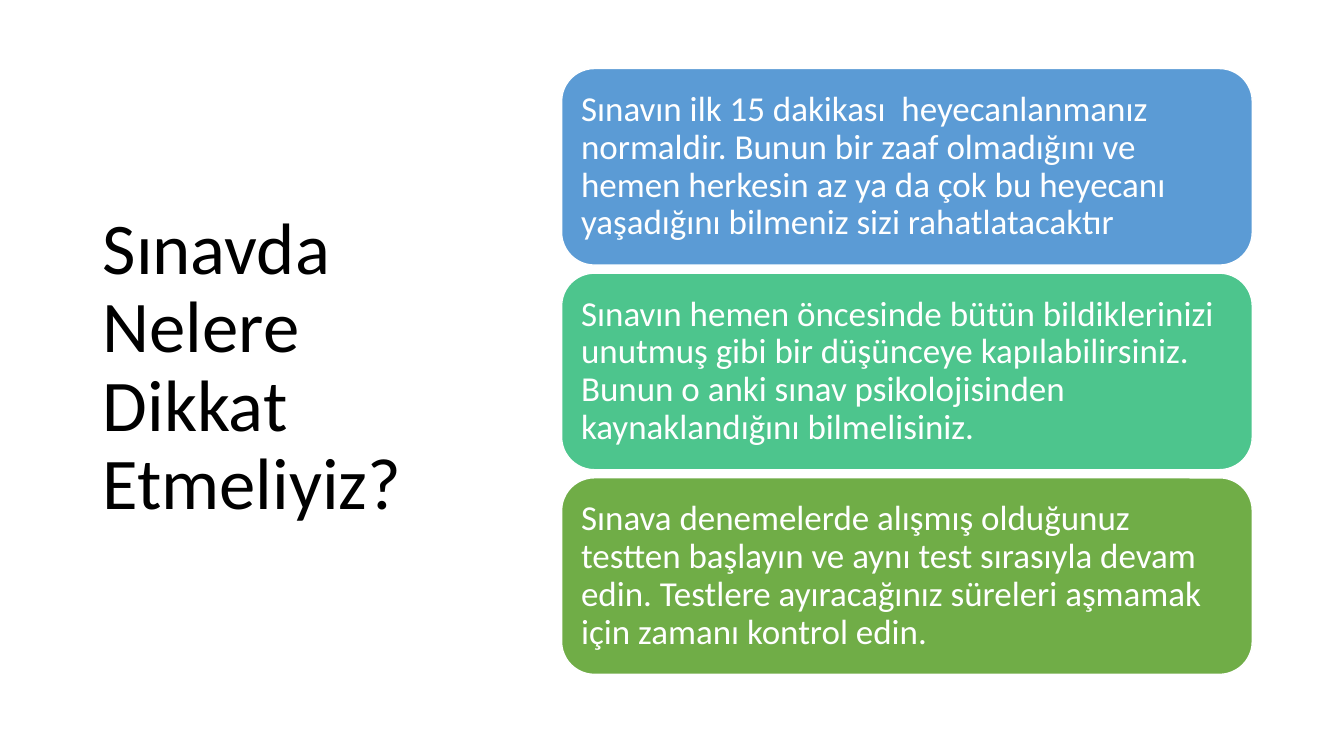
from pptx import Presentation
from pptx.dml.color import RGBColor
from pptx.enum.shapes import MSO_SHAPE
from pptx.enum.text import MSO_ANCHOR, PP_ALIGN
from pptx.util import Inches, Pt

SLIDE_WIDTH, SLIDE_HEIGHT = 13.33, 7.5
CARD_LEFT, CARD_TOP = 5.57, 0.68
CARD_WIDTH, CARD_HEIGHT = 6.85, 1.95
ROW_PITCH = 2.03

TITLE = "Sınavda Nelere Dikkat Etmeliyiz?"
CARDS = [
    ("5B9BD5", "Sınavın ilk 15 dakikası  heyecanlanmanız normaldir. Bunun bir zaaf "
               "olmadığını ve hemen herkesin az ya da çok bu heyecanı yaşadığını "
               "bilmeniz sizi rahatlatacaktır"),
    ("4DC58D", "Sınavın hemen öncesinde bütün bildiklerinizi unutmuş gibi bir "
               "düşünceye kapılabilirsiniz. Bunun o anki sınav psikolojisinden "
               "kaynaklandığını bilmelisiniz."),
    ("70AD47", "Sınava denemelerde alışmış olduğunuz testten başlayın ve aynı test "
               "sırasıyla devam edin. Testlere ayıracağınız süreleri aşmamak için "
               "zamanı kontrol edin."),
]


def color(value):
    return RGBColor.from_string(value)


def write_text(shape, text, size, fill, inset=0.1):
    frame = shape.text_frame
    frame.word_wrap = True
    frame.vertical_anchor = MSO_ANCHOR.MIDDLE
    frame.margin_left = frame.margin_right = Inches(inset)
    frame.margin_top = frame.margin_bottom = Inches(inset)
    para = frame.paragraphs[0]
    para.alignment = PP_ALIGN.LEFT
    para.line_spacing = 0.9
    span = para.add_run()
    span.text = text
    span.font.name = "Calibri"
    span.font.size = Pt(size)
    span.font.color.rgb = color(fill)


def add_title(page):
    box = page.shapes.add_textbox(Inches(0.92), Inches(0.61), Inches(3.69), Inches(6.09))
    write_text(box, TITLE, size=52, fill="000000")


def add_card(page, row, fill, text):
    card = page.shapes.add_shape(
        MSO_SHAPE.ROUNDED_RECTANGLE,
        Inches(CARD_LEFT), Inches(CARD_TOP + row * ROW_PITCH),
        Inches(CARD_WIDTH), Inches(CARD_HEIGHT),
    )
    card.shadow.inherit = False
    card.fill.solid()
    card.fill.fore_color.rgb = color(fill)
    card.line.color.rgb = color("FFFFFF")
    card.line.width = Pt(1)
    write_text(card, text, size=25, fill="FFFFFF")


def main():
    deck = Presentation()
    deck.slide_width = Inches(SLIDE_WIDTH)
    deck.slide_height = Inches(SLIDE_HEIGHT)
    page = deck.slides.add_slide(deck.slide_layouts[6])
    add_title(page)
    for row, (fill, text) in enumerate(CARDS):
        add_card(page, row, fill, text)
    deck.save("out.pptx")


if __name__ == "__main__":
    main()
